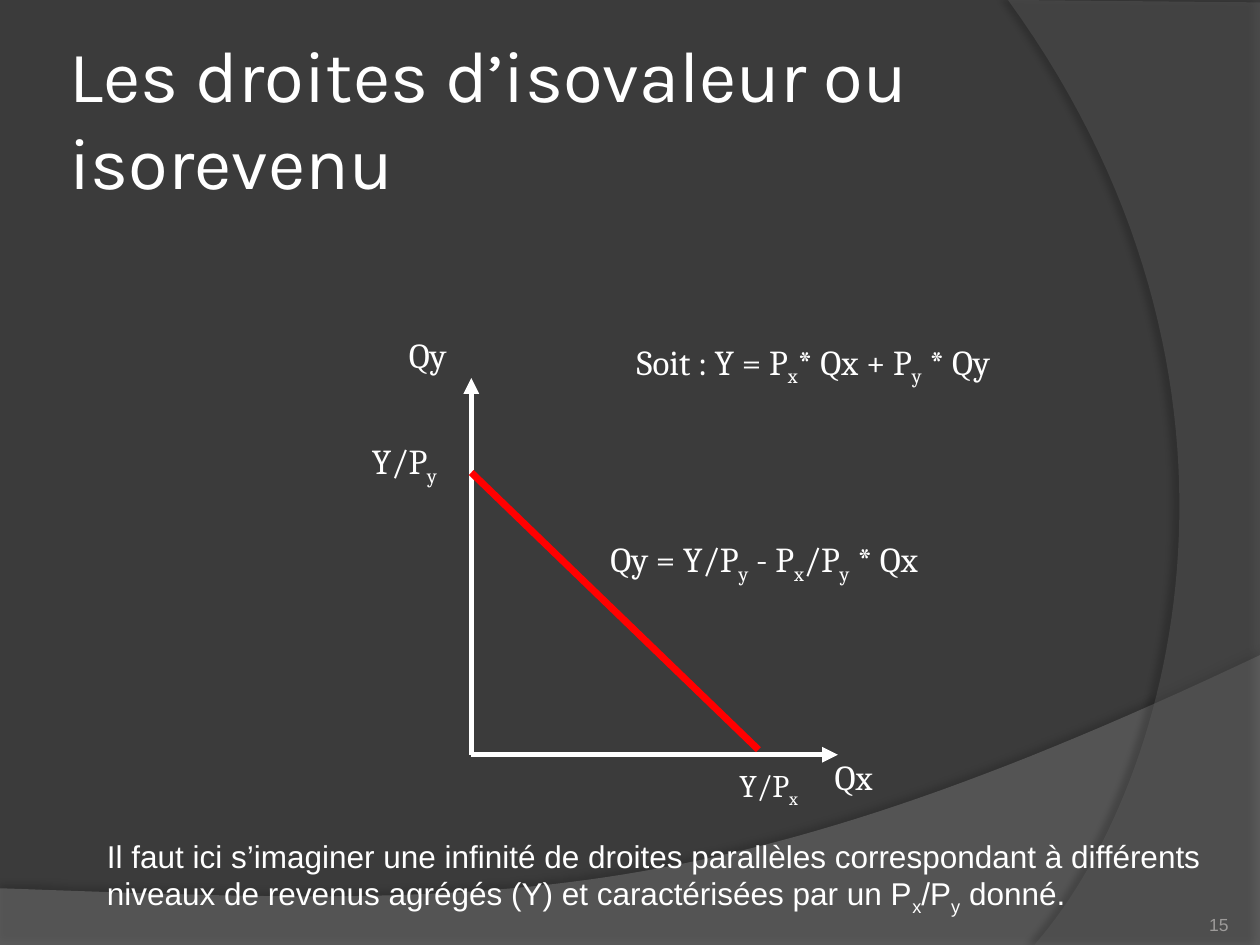
from lxml.etree import SubElement
from pptx import Presentation
from pptx.dml.color import RGBColor
from pptx.enum.shapes import MSO_CONNECTOR
from pptx.enum.text import MSO_ANCHOR as ANCHOR, MSO_AUTO_SIZE as FIT, PP_ALIGN as ALIGN
from pptx.oxml.ns import qn
from pptx.util import Pt

# Theme: colours, fonts and sizes
THEME = {
    "background": "3B3B3B", "band": "7F7F7F", "arc": "5E5E5E",
    "text": "FFFFFF", "axis": "FFFFFF", "isovalue": "FF0000",
    "number": "9D9B9A", "shadow": "000000",
    "title_font": "Karla", "body_font": "Arial", "formula_font": "Cambria",
    "title_size": 41.4, "formula_size": 20, "body_size": 18, "number_size": 10,
}

# Content: an underscore lowers the character after it; boxes are left, top, width, height
TITLE = "Les droites d’isovaleur ou isorevenu"
TITLE_BOX = (36, 21.6, 588.2, 90)
FORMULAS = [  # text, box, size, wrap
    ("Qx", (468, 428.4, 39.6, 31.5), THEME["formula_size"], False),
    ("Qy", (224.6, 187.2, 39.6, 31.5), THEME["formula_size"], False),
    ("Y/P_x", (414.7, 434.2, 49, 29), THEME["body_size"], False),
    ("Y/P_y", (190.1, 247.7, 82, 31.5), THEME["formula_size"], True),
    ("Qy = Y/P_y - P_x/P_y * Qx", (331.9, 303.8, 209.5, 31.5), THEME["formula_size"], True),
    ("Soit : Y = P_x* Qx + P_y * Qy", (342.7, 190.8, 244.1, 31.5), THEME["formula_size"], True),
]
REMARK = ("Il faut ici s’imaginer une infinité de droites parallèles correspondant à "
          "différents niveaux de revenus agrégés (Y) et caractérisées par un P_x/P_y donné.")
REMARK_BOX = (54, 474.5, 640.8, 51)
NUMBER, NUMBER_BOX = "15", (642.2, 505.4, 59.8, 28.8)

ORIGIN = (269.3, 431.3)
LINES = [  # start, end, colour, width, arrowhead
    (ORIGIN, (478.8, ORIGIN[1]), THEME["axis"], 3, True),
    (ORIGIN, (ORIGIN[0], 216), THEME["axis"], 3, True),
    ((ORIGIN[0], 270), (433.4, 428.4), THEME["isovalue"], 4, False),
]
BACKDROPS = [  # corners, closing Bezier curve, colour, opacity, shadow
    {"corners": [(0, 540), (720, 540)],
     "curve": [(720, 374.4), (402.5, 524.9), (281.5, 517.7), (0, 507.6)],
     "colour": THEME["band"], "opacity": 45,
     "shadow": {"opacity": 35, "blur": 4, "distance": 3.5, "angle": 270}},
    {"corners": [(720, 1.4), (720, 540)],
     "curve": [(591.1, 540), (673.2, 445.7), (733, 216), (576, 0)],
     "colour": THEME["arc"], "opacity": 40,
     "shadow": {"opacity": 45, "blur": 4, "distance": 4, "angle": 180}},
]
CURVE_STEPS = 60


def rgb(colour):
    return RGBColor.from_string(colour)


def points(values):
    return [Pt(value) for value in values]


def apply(target, values):
    for name, value in values.items():
        setattr(target, name, value)


def bezier(start, control1, control2, end):
    for step in range(CURVE_STEPS + 1):
        t = step / CURVE_STEPS
        weights = ((1 - t) ** 3, 3 * t * (1 - t) ** 2, 3 * t * t * (1 - t), t ** 3)
        yield tuple(sum(w * p[axis] for w, p in zip(weights, (start, control1, control2, end)))
                    for axis in (0, 1))


def add_alpha(colour_element, opacity):
    SubElement(colour_element, qn("a:alpha"), val=str(opacity * 1000))


def add_backdrop(shapes, corners, curve, colour, opacity, shadow):
    outline = [points(p) for p in corners + list(bezier(*curve))]
    builder = shapes.build_freeform(*outline[0])
    builder.add_line_segments(outline[1:], close=True)
    shape = builder.convert_to_shape()
    shape.fill.solid()
    shape.fill.fore_color.rgb = rgb(colour)
    shape.line.fill.background()
    shape.shadow.inherit = False
    properties = shape._element.spPr
    add_alpha(properties.find(qn("a:solidFill"))[0], opacity)
    outer = SubElement(properties.find(qn("a:effectLst")), qn("a:outerShdw"),
                       blurRad=str(Pt(shadow["blur"])), dist=str(Pt(shadow["distance"])),
                       dir=str(shadow["angle"] * 60000), algn="ctr", rotWithShape="0")
    add_alpha(SubElement(outer, qn("a:srgbClr"), val=THEME["shadow"]), shadow["opacity"])


def add_line(shapes, start, end, colour, width, arrow):
    line = shapes.add_connector(MSO_CONNECTOR.STRAIGHT, *points(start + end))
    line.line.color.rgb = rgb(colour)
    line.line.width = Pt(width)
    if arrow:
        SubElement(line.line._get_or_add_ln(), qn("a:tailEnd"), type="triangle")
    SubElement(line._element.spPr, qn("a:effectLst"))


def write(shape, text, font, size, colour=THEME["text"], align=ALIGN.LEFT, **frame_format):
    frame = shape.text_frame
    apply(frame, {"word_wrap": True, **frame_format})
    paragraph = frame.paragraphs[0]
    paragraph.alignment = align
    first, *rest = text.split("_")
    pieces = [(first, False)]
    for part in rest:
        pieces += [(part[0], True), (part[1:], False)]
    for piece, lowered in pieces:
        if piece:
            run = paragraph.add_run()
            run.text = piece
            apply(run.font, {"name": font, "size": Pt(size)})
            run.font.color.rgb = rgb(colour)
            if lowered:
                run.font._element.set("baseline", "-25000")


def margins(value):
    return {f"margin_{side}": Pt(value) for side in ("left", "top", "right", "bottom")}


def main():
    deck = Presentation()
    apply(deck, {"slide_width": Pt(720), "slide_height": Pt(540)})
    slide = deck.slides.add_slide(deck.slide_layouts[5])
    shapes = slide.shapes
    slide.background.fill.solid()
    slide.background.fill.fore_color.rgb = rgb(THEME["background"])

    # Backdrop shapes, behind the title
    for backdrop in BACKDROPS:
        add_backdrop(shapes, **backdrop)

    # Title
    title = shapes.title
    shapes._spTree.append(title._element)
    apply(title, dict(zip(("left", "top", "width", "height"), points(TITLE_BOX))))
    write(title, TITLE, THEME["title_font"], THEME["title_size"],
          vertical_anchor=ANCHOR.MIDDLE, auto_size=FIT.NONE, **margins(3.6))

    # Axes and isovalue line
    for line in LINES:
        add_line(shapes, *line)

    # Axis labels and equations
    for text, box, size, wrap in FORMULAS:
        write(shapes.add_textbox(*points(box)), text, THEME["formula_font"], size,
              align=ALIGN.CENTER, word_wrap=wrap, auto_size=FIT.SHAPE_TO_FIT_TEXT)

    # Slide number and remark
    write(shapes.add_textbox(*points(NUMBER_BOX)), NUMBER, THEME["body_font"],
          THEME["number_size"], THEME["number"], ALIGN.RIGHT,
          vertical_anchor=ANCHOR.BOTTOM, **margins(0))
    write(shapes.add_textbox(*points(REMARK_BOX)), REMARK, THEME["body_font"],
          THEME["body_size"], auto_size=FIT.SHAPE_TO_FIT_TEXT)

    deck.save("out.pptx")


if __name__ == "__main__":
    main()
